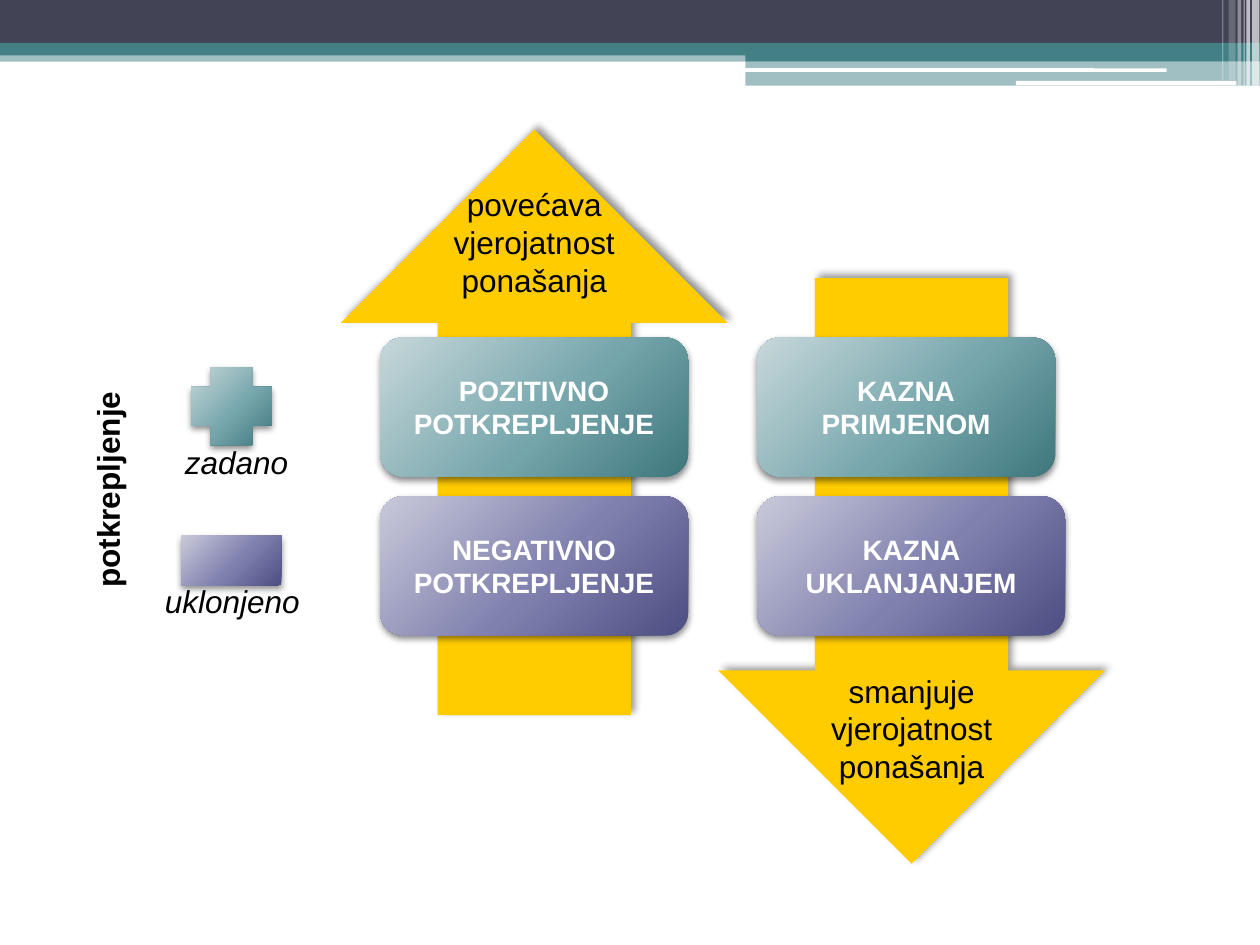
from lxml.etree import SubElement
from pptx import Presentation
from pptx.dml.color import RGBColor
from pptx.enum.shapes import MSO_SHAPE as Preset
from pptx.enum.text import MSO_ANCHOR as Anchor, MSO_AUTO_SIZE as AutoSize, PP_ALIGN as Align
from pptx.oxml.ns import qn
from pptx.util import Pt

TEAL, NAVY, WHITE, YELLOW, BLACK = "438086", "424456", "FFFFFF", "FFCC00", "000000"
TEAL_STOPS = ("C7D7DA", "77A7AD", "3E777D")
VIOLET_STOPS = ("C9C9DA", "7F80AE", "4D4E81")
GLOW = {"alpha": 45, "blur": 4, "dist": 2, "angle": 90}
SIDE_SHADOW = {"alpha": 40, "blur": 4, "dist": 3, "angle": 315}


def rgb(color):
    return RGBColor.from_string(color)


def add_color(parent, color, alpha=None):
    node = SubElement(parent, qn("a:srgbClr"), val=color)
    if alpha is not None:
        SubElement(node, qn("a:alpha"), val=str(alpha * 1000))


def paint_gradient(shape, stops):
    shape.fill.background()
    properties = shape._element.spPr
    gradient = SubElement(properties, qn("a:gradFill"), rotWithShape="1")
    properties.replace(properties.find(qn("a:noFill")), gradient)
    stop_list = SubElement(gradient, qn("a:gsLst"))
    for position, color in zip((0, 55, 100), stops):
        add_color(SubElement(stop_list, qn("a:gs"), pos=str(position * 1000)), color)
    radial = SubElement(gradient, qn("a:path"))
    radial.set("path", "circle")
    SubElement(radial, qn("a:fillToRect"), l="-40000", t="-90000", r="140000", b="190000")


def add_shadow(shape, alpha, blur, dist, angle):
    effects = shape._element.spPr.find(qn("a:effectLst"))
    outer = SubElement(effects, qn("a:outerShdw"), blurRad=str(Pt(blur)), dist=str(Pt(dist)),
                       dir=str(angle * 60000), algn="ctr", rotWithShape="0")
    add_color(outer, BLACK, alpha)


def add_block(slide, preset, box, fill, alpha=None, shadow=None):
    block = slide.shapes.add_shape(preset, *map(Pt, box))
    block.shadow.inherit = False
    block.line.fill.background()
    if isinstance(fill, tuple):
        paint_gradient(block, fill)
    else:
        block.fill.solid()
        block.fill.fore_color.rgb = rgb(fill)
    if alpha is not None:
        color = block._element.spPr.find(qn("a:solidFill"))[0]
        SubElement(color, qn("a:alpha"), val=str(alpha * 1000))
    if shadow:
        add_shadow(block, **shadow)
    return block


def write(frame, lines, color, align=Align.LEFT, **font_values):
    for index, line in enumerate(lines):
        paragraph = frame.paragraphs[0] if index == 0 else frame.add_paragraph()
        paragraph.alignment = align
        run = paragraph.add_run()
        run.text = line
        run.font.color.rgb = rgb(color)
        for key, value in {"name": "Arial", **font_values}.items():
            setattr(run.font, key, value)


def add_label(slide, box, lines, align=Align.LEFT, **font_values):
    label = slide.shapes.add_textbox(*map(Pt, box))
    for key, value in {"word_wrap": False, "auto_size": AutoSize.SHAPE_TO_FIT_TEXT}.items():
        setattr(label.text_frame, key, value)
    write(label.text_frame, lines, BLACK, align, size=Pt(18), **font_values)
    return label


def draw_header(slide, left, top, width):
    half = 426
    bands = [
        (0, 28.8, width, 6.5, TEAL, 50),
        (0, 0, width, 24.5, NAVY, None),
        (0, 24.5, width, 7.2, TEAL, None),
        (half, 28, width - half, 7, TEAL, None),
        (half, 35, width - half, 14, TEAL, 50),
    ]
    for x, y, w, h, color, alpha in bands:
        add_block(slide, Preset.RECTANGLE, (left + x, top + y, w, h), color, alpha)
    for x, y, w, h in [(425.5, 39, 241.2, 2), (580.5, 46.2, 126, 2.6)]:
        add_block(slide, Preset.ROUNDED_RECTANGLE, (left + x, top + y, w, h), WHITE)
    stripes = [(715.5, 4.2, 49, 65), (712.2, 2, 49, 65), (710.6, 0.7, 49, 60),
               (707.2, 2, 49, 40), (702, 4, 46, 20), (698.4, 0.7, 46, 30)]
    for x, w, h, alpha in stripes:
        add_block(slide, Preset.RECTANGLE, (left + x, top, w, h), WHITE, alpha)


def draw_legend(slide, left, top):
    title = add_label(slide, (left - 2.2, top + 54.7, 127.4, 29), ["potkrepljenje"], bold=True)
    title.rotation = 270
    add_label(slide, (left + 98.6, top + 39.6, 74.2, 29), ["zadano"], italic=True)
    add_label(slide, (left + 87.1, top + 118.8, 96.5, 29), ["uklonjeno"], italic=True)
    add_block(slide, Preset.CROSS, (left + 109.3, top, 46, 44.4), TEAL_STOPS, shadow=GLOW)
    add_block(slide, Preset.RECTANGLE, (left + 103.5, top + 96.3, 57.3, 28.3),
              VIOLET_STOPS, shadow=GLOW)


def draw_arrow(slide, left, top, width, height, rotation, label_top, lines):
    arrow = add_block(slide, Preset.UP_ARROW, (left, top, width, height), YELLOW,
                      shadow=SIDE_SHADOW)
    arrow.rotation = rotation
    label_width = 107.3
    add_label(slide, (left + (width - label_width) / 2, top + label_top, label_width, 72.7),
              lines, Align.CENTER)


def draw_tile(slide, left, top, width, height, stops, lines):
    tile = add_block(slide, Preset.ROUNDED_RECTANGLE, (left, top, width, height), stops,
                     shadow=GLOW)
    for key, value in {"word_wrap": True, "vertical_anchor": Anchor.MIDDLE}.items():
        setattr(tile.text_frame, key, value)
    write(tile.text_frame, lines, WHITE, Align.CENTER, size=Pt(16), bold=True)


def draw_matrix(slide, left, top):
    column_gap, row_gap = 215.4, 90.8
    rows = [
        (TEAL_STOPS, [(176, ["POZITIVNO", "POTKREPLJENJE"]), (170.4, ["KAZNA", "PRIMJENOM"])]),
        (VIOLET_STOPS, [(176, ["NEGATIVNO", "POTKREPLJENJE"]), (176, ["KAZNA UKLANJANJEM"])]),
    ]
    for row, (stops, tiles) in enumerate(rows):
        for column, (width, lines) in enumerate(tiles):
            draw_tile(slide, left + column * column_gap, top + row * row_gap,
                      width, 79.5, stops, lines)


def main():
    presentation = Presentation()
    presentation.slide_width, presentation.slide_height = Pt(720), Pt(540)
    slide = presentation.slides.add_slide(presentation.slide_layouts[6])
    draw_header(slide, 0, 0, 720)
    draw_legend(slide, 0, 210)
    draw_arrow(slide, 194.8, 74, 221, 334.6, 0, 28.3,
               ["povećava", "vjerojatnost", "ponašanja"])
    draw_arrow(slide, 410.4, 159, 221, 334.6, 180, 221.2,
               ["smanjuje", "vjerojatnost", "ponašanja"])
    draw_matrix(slide, 217.2, 192.8)
    presentation.save("out.pptx")


if __name__ == "__main__":
    main()
